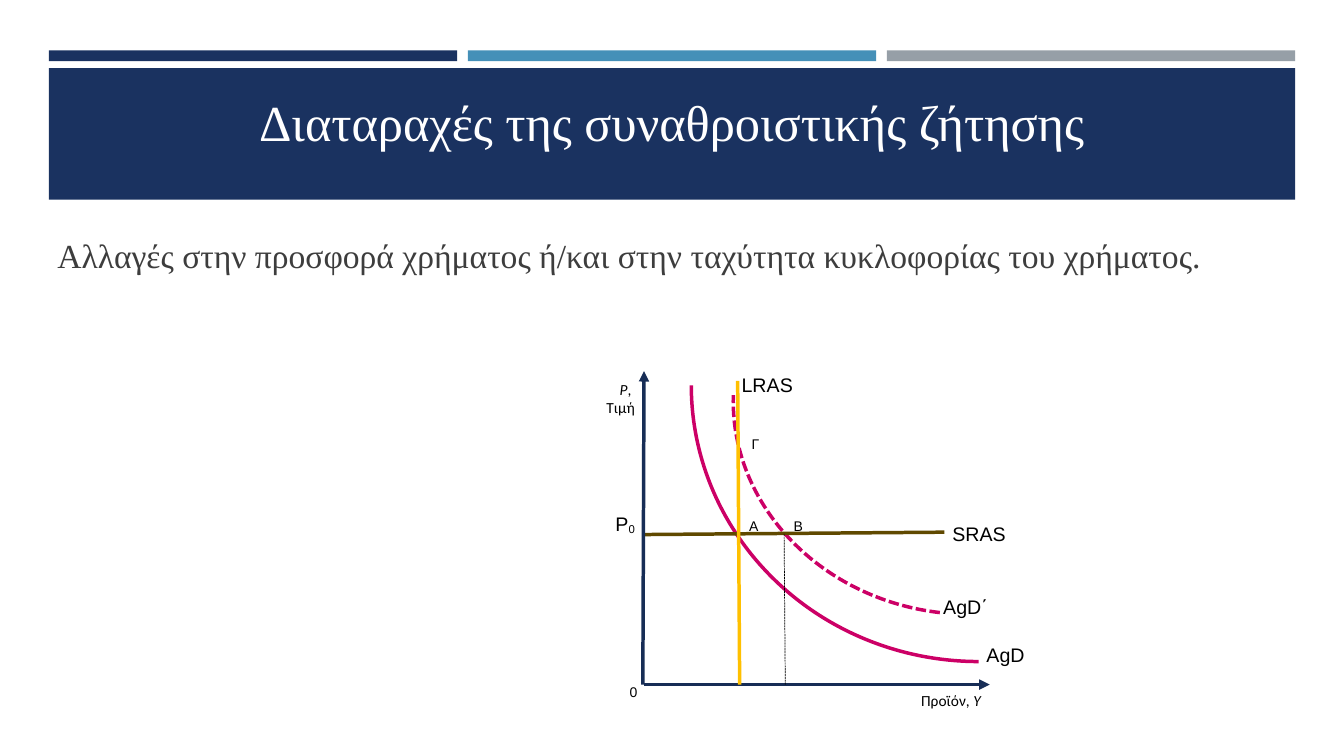
from lxml.etree import SubElement
from pptx import Presentation
from pptx.dml.color import RGBColor
from pptx.enum.dml import MSO_LINE
from pptx.enum.shapes import MSO_CONNECTOR, MSO_SHAPE
from pptx.enum.text import MSO_ANCHOR, MSO_AUTO_SIZE, PP_ALIGN
from pptx.oxml.ns import qn
from pptx.util import Cm, Pt

NAVY, BLUE, GREY = "1A3260", "4590B8", "969FA7"
AXIS, DEMAND, SRAS, LRAS = "172D56", "CC0066", "604900", "FFC000"
LEFT, CENTER, RIGHT = PP_ALIGN.LEFT, PP_ALIGN.CENTER, PP_ALIGN.RIGHT


def rgb(color):
    """Turn a hex string into a colour."""
    return RGBColor.from_string(color)


def place(sp, x, y, w, h):
    """Move a shape to a box given in centimetres."""
    sp.left, sp.top, sp.width, sp.height = Cm(x), Cm(y), Cm(w), Cm(h)


def style(p, size, font, color, align):
    """Format a paragraph and all its runs."""
    p.alignment = align
    for r in p.runs:
        r.font.size, r.font.name = Pt(size), font
        r.font.color.rgb = rgb(color)


def add_bar(s, x, y, w, h, color):
    """Add a plain filled rectangle."""
    sp = s.shapes.add_shape(MSO_SHAPE.RECTANGLE, Cm(x), Cm(y), Cm(w), Cm(h))
    sp.shadow.inherit = False
    sp.fill.solid()
    sp.fill.fore_color.rgb = rgb(color)
    sp.line.fill.background()


def set_line(line, color, width, dash=None):
    """Set the colour, width and dash of a line."""
    line.color.rgb = rgb(color)
    line.width = Pt(width)
    if dash:
        line.dash_style = dash


def add_line(s, x1, y1, x2, y2, color, width=2.5, dash=None, arrow=False):
    """Add a straight line, with an optional arrowhead at its end."""
    sp = s.shapes.add_connector(MSO_CONNECTOR.STRAIGHT, Cm(x1), Cm(y1), Cm(x2), Cm(y2))
    set_line(sp.line, color, width, dash)
    if arrow:
        SubElement(sp.line._get_or_add_ln(), qn("a:tailEnd"), type="triangle")
    SubElement(sp.element.spPr, qn("a:effectLst"))


def add_curve(s, x, y, w, h, rotation, dash=None, angles=None):
    """Add a demand curve as a rotated arc."""
    sp = s.shapes.add_shape(MSO_SHAPE.ARC, Cm(x), Cm(y), Cm(w), Cm(h))
    sp.shadow.inherit = False
    sp.fill.background()
    sp.rotation = rotation
    set_line(sp.line, DEMAND, 2.5, dash)
    if angles:
        sp.adjustments[0], sp.adjustments[1] = angles


def add_label(s, x, y, w, text, size=14, font="Arial", align=LEFT):
    """Add a graph label and return its text frame."""
    tf = s.shapes.add_textbox(Cm(x), Cm(y), Cm(w), Cm(0.8)).text_frame
    tf.word_wrap = w > 1.5
    tf.text = text
    for p in tf.paragraphs:
        style(p, size, font, "000000", align)
    return tf


def add_run(p, text, size, font):
    """Append a formatted run to a paragraph and return it."""
    r = p.add_run()
    r.text = text
    style(p, size, font, "000000", p.alignment)
    return r


def build_header(s, x, y, w):
    """Draw the three bars, the band and the title."""
    gap = 0.27
    bar = (w - 2 * gap) / 3
    for i, color in enumerate((NAVY, BLUE, GREY)):
        add_bar(s, x + i * (bar + gap), y, bar, 0.27, color)
    add_bar(s, x, y + 0.45, w, 3.31, NAVY)
    title = s.shapes.title
    title.element.getparent().append(title.element)
    place(title, x + 0.4, y + 0.48, w - 0.8, 2.21)
    tf = title.text_frame
    tf.auto_size = MSO_AUTO_SIZE.NONE
    tf.vertical_anchor = MSO_ANCHOR.BOTTOM
    tf.text = "Διαταραχές της συναθροιστικής ζήτησης"
    style(tf.paragraphs[0], 36, "Times New Roman", "FFFFFF", CENTER)


def build_body(s, x, y, w, h):
    """Fill the body placeholder with one unbulleted paragraph."""
    sp = s.placeholders[1]
    place(sp, x, y, w, h)
    tf = sp.text_frame
    tf.auto_size = MSO_AUTO_SIZE.NONE
    tf.vertical_anchor = MSO_ANCHOR.TOP
    tf.text = "Αλλαγές στην προσφορά χρήματος ή/και στην ταχύτητα κυκλοφορίας του χρήματος."
    p = tf.paragraphs[0]
    style(p, 24, "Times New Roman", "3D3D3D", PP_ALIGN.JUSTIFY)
    p.space_before, p.space_after = Pt(4.8), Pt(6)
    pPr = p._p.get_or_add_pPr()
    pPr.set("marL", "0")
    pPr.set("indent", "0")
    SubElement(pPr, qn("a:buNone"))


def build_graph(s, x, y, w, h):
    """Draw the supply and demand graph, with its axes along the box."""
    base = y + h
    add_curve(s, x + 1.19, base - 14.5, 14.48, 13.92, 180)
    add_curve(s, x + 2.24, base - 12.24, 11.63, 10.46, 186.6,
              MSO_LINE.SQUARE_DOT, (162, 213.73))
    add_line(s, x, base - 3.78, x + 7.57, base - 3.84, SRAS)
    add_line(s, x - 0.03, base, x, y, AXIS, arrow=True)
    add_line(s, x, base, x + w, base, AXIS, arrow=True)
    add_line(s, x + 2.41, base, x + 2.36, base - 7.65, LRAS)
    add_line(s, x + 3.56, base, x + 3.53, base - 3.81, "000000", 0.5, MSO_LINE.SQUARE_DOT)

    for text, dx, up in (("SRAS", 7.52, 4.22), ("AgD", 8.38, 1.17),
                         ("AgD΄", 7.29, 2.39), ("LRAS", 2.21, 7.98)):
        add_label(s, x + dx, base - up, 2.5, text)
    for text, dx, up in (("A", 2.44, 4.34), ("B", 3.56, 4.34), ("Γ", 2.5, 6.4)):
        add_label(s, x + dx, base - up, 0.46, text, 10, align=CENTER)
    add_label(s, x - 0.61, base - 0.15, 0.69, "0", 10, align=RIGHT)

    tf = add_label(s, x - 0.97, base - 4.47, 1.27, "P")
    r = add_run(tf.paragraphs[0], "0", 14, "Arial")
    r.font._element.set("baseline", "-10000")

    tf = add_label(s, x - 3.66, base - 7.8, 3.68, "P\nΤιμή", 11, "Calibri", RIGHT)
    tf.paragraphs[0].runs[0].font.italic = True
    add_run(tf.paragraphs[0], ", ", 11, "Calibri")

    tf = add_label(s, x + 5.84, base + 0.05, 2.9, "Προϊόν, ", 11, "Calibri", RIGHT)
    add_run(tf.paragraphs[0], "Y", 11, "Calibri").font.italic = True


def main():
    """Build the slide and save it."""
    prs = Presentation()
    prs.slide_width, prs.slide_height = Cm(33.87), Cm(19.05)
    s = prs.slides.add_slide(prs.slide_layouts[1])
    build_header(s, 1.23, 1.27, 31.41)
    build_body(s, 1.19, 5.79, 30.68, 3.1)
    build_graph(s, 16.23, 9.35, 8.71, 7.9)
    prs.save("out.pptx")


if __name__ == "__main__":
    main()
